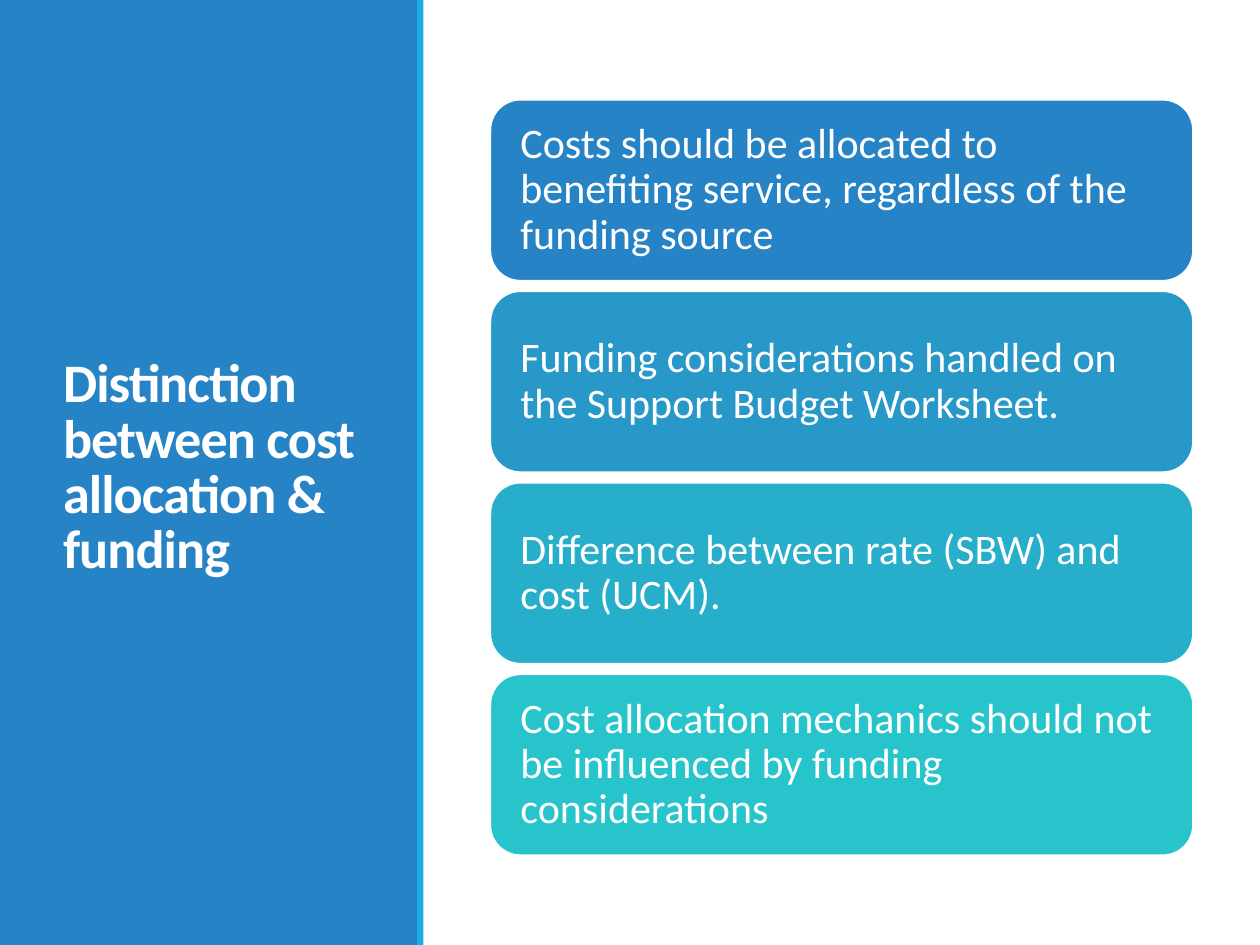
from dataclasses import dataclass

from pptx import Presentation
from pptx.dml.color import RGBColor
from pptx.enum.shapes import MSO_SHAPE
from pptx.enum.text import MSO_ANCHOR, MSO_AUTO_SIZE, PP_ALIGN
from pptx.shapes.autoshape import Shape
from pptx.slide import Slide
from pptx.util import Inches, Pt


@dataclass(frozen=True)
class Theme:
    font: str = "Calibri"
    title_size: float = 31
    card_size: float = 24
    white: str = "FFFFFF"
    panel: str = "2683C6"
    accent: str = "1CADE4"


@dataclass(frozen=True)
class Box:
    left: float
    top: float
    width: float
    height: float

    def lengths(self) -> list[int]:
        return [Inches(n) for n in (self.left, self.top, self.width, self.height)]


@dataclass(frozen=True)
class Card:
    text: str
    color: str


THEME = Theme()
PAGE_WIDTH, PAGE_HEIGHT = 10, 7.5
PANEL = Box(0, 0, 3.32, PAGE_HEIGHT)
STRIPE = Box(3.31, 0, 0.05, PAGE_HEIGHT)
TITLE = Box(0.4, 0.57, 2.53, 6.31)
FIRST_CARD = Box(3.89, 0.79, 5.58, 1.44)
CARD_PITCH = 1.52
CARD_INSET = 0.17

CARDS = [
    Card("Costs should be allocated to benefiting service, "
         "regardless of the funding source", "2683C6"),
    Card("Funding considerations handled on the Support Budget Worksheet.", "2798C8"),
    Card("Difference between rate (SBW) and cost (UCM).", "27AECA"),
    Card("Cost allocation mechanics should not be influenced "
         "by funding considerations", "28C4CC"),
]


def add_block(page: Slide, kind: MSO_SHAPE, box: Box, color: str) -> Shape:
    block = page.shapes.add_shape(kind, *box.lengths())
    block.shadow.inherit = False
    block.fill.solid()
    block.fill.fore_color.rgb = RGBColor.from_string(color)
    block.line.fill.background()
    return block


def write(shape: Shape, text: str, size: float, spacing: float, inset: float,
          bold: bool = False, tracking: int = 0) -> None:
    """Set left-aligned white text, centred vertically; tracking is in 1/100 pt."""
    frame = shape.text_frame
    frame.word_wrap = True
    frame.auto_size = MSO_AUTO_SIZE.NONE
    frame.vertical_anchor = MSO_ANCHOR.MIDDLE
    frame.margin_left = frame.margin_right = Inches(inset)
    frame.margin_top = frame.margin_bottom = Inches(inset)
    para = frame.paragraphs[0]
    para.alignment = PP_ALIGN.LEFT
    para.line_spacing = spacing
    span = para.add_run()
    span.text = text
    span.font.name = THEME.font
    span.font.size = Pt(size)
    span.font.bold = bold
    span.font.color.rgb = RGBColor.from_string(THEME.white)
    if tracking:
        span.font._element.set("spc", str(tracking))


def add_title(page: Slide, text: str) -> None:
    title = page.shapes.title
    title.left, title.top, title.width, title.height = TITLE.lengths()
    write(title, text, THEME.title_size, 0.85, 0.1, bold=True, tracking=-50)
    # The placeholder comes first in the tree; bring it in front of the panel.
    page.shapes._spTree.append(title._element)


def add_card(page: Slide, row: int, card: Card) -> None:
    box = Box(FIRST_CARD.left, FIRST_CARD.top + row * CARD_PITCH,
              FIRST_CARD.width, FIRST_CARD.height)
    block = add_block(page, MSO_SHAPE.ROUNDED_RECTANGLE, box, card.color)
    block.line.color.rgb = RGBColor.from_string(THEME.white)
    block.line.width = Pt(1.25)
    write(block, card.text, THEME.card_size, 0.9, CARD_INSET)


def main() -> None:
    deck = Presentation()
    deck.slide_width, deck.slide_height = Inches(PAGE_WIDTH), Inches(PAGE_HEIGHT)
    page = deck.slides.add_slide(deck.slide_layouts.get_by_name("Title Only"))
    add_block(page, MSO_SHAPE.RECTANGLE, PANEL, THEME.panel)
    add_title(page, "Distinction between cost allocation & funding")
    add_block(page, MSO_SHAPE.RECTANGLE, STRIPE, THEME.accent)
    for row, card in enumerate(CARDS):
        add_card(page, row, card)
    deck.save("out.pptx")


if __name__ == "__main__":
    main()
